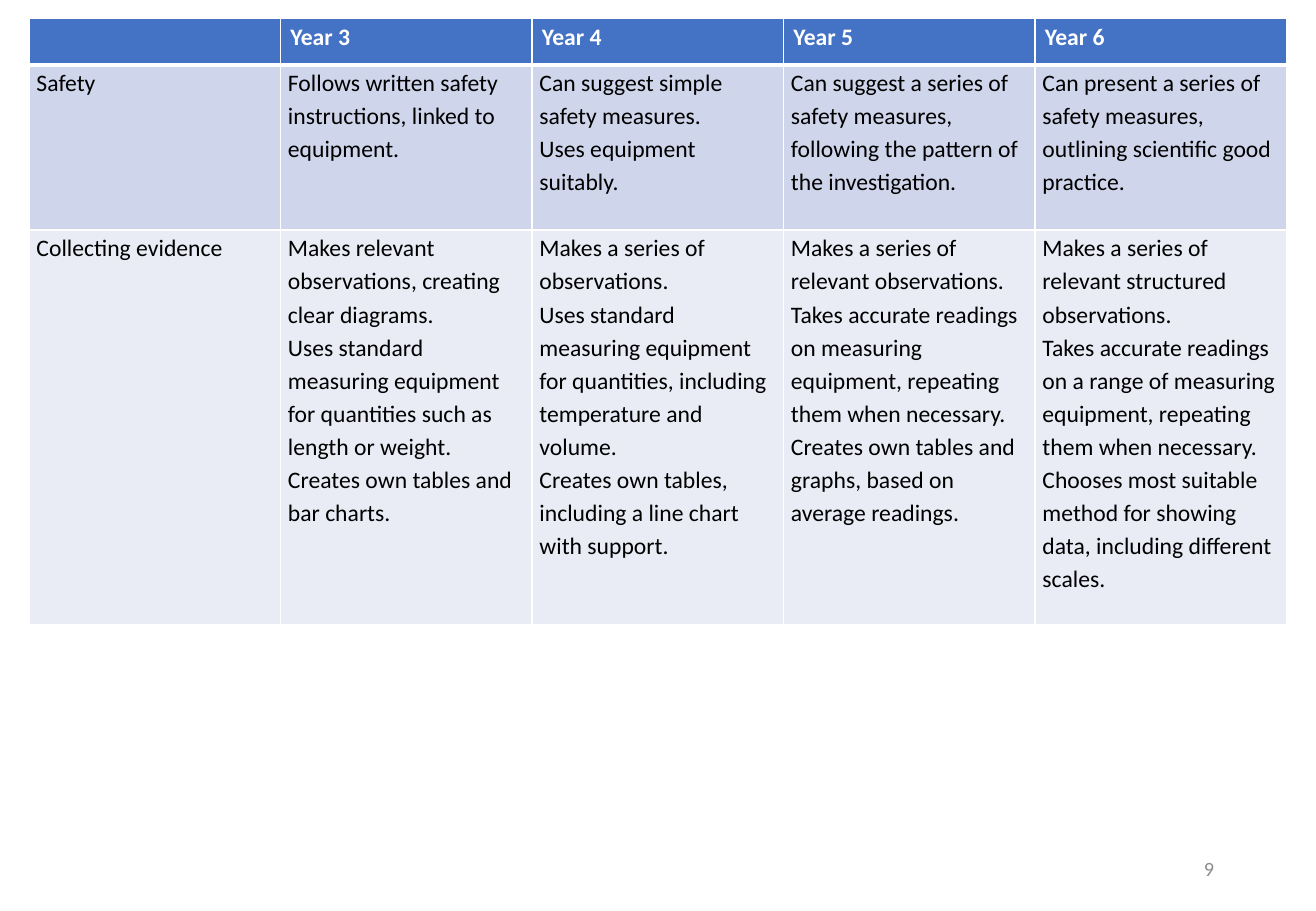
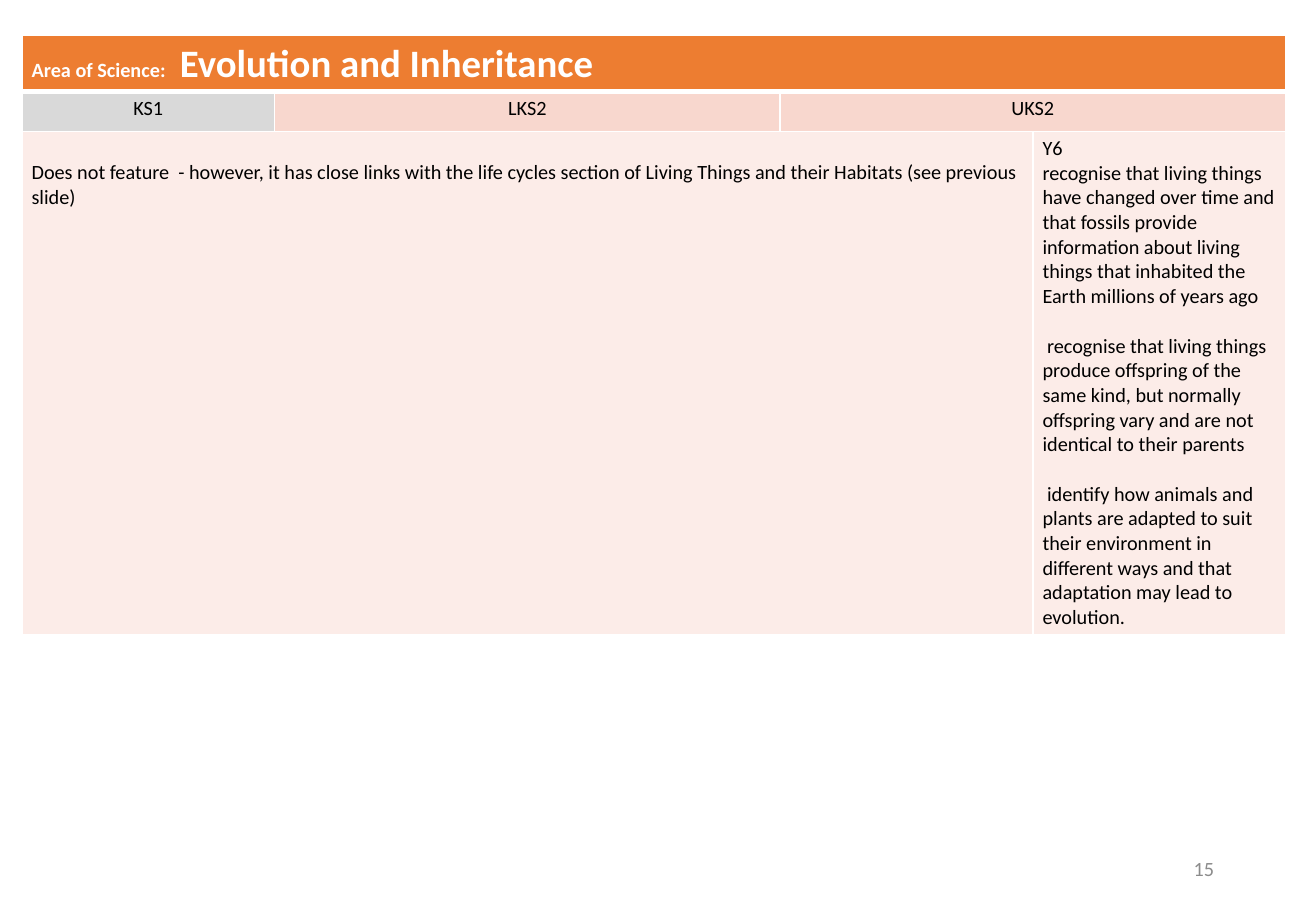
from dataclasses import dataclass

from lxml import etree
from pptx import Presentation
from pptx.dml.color import RGBColor
from pptx.enum import text as t
from pptx.oxml import ns
from pptx.util import Inches, Pt


@dataclass(frozen=True)
class Theme:
    font: str = "Calibri"
    white: str = "FFFFFF"
    black: str = "000000"
    grey: str = "8C8C8C"
    blue: str = "4472C4"
    blue_mid: str = "CFD5EA"
    blue_pale: str = "E9EBF5"
    orange: str = "ED7D31"
    orange_mid: str = "F8D7CE"
    orange_pale: str = "FCECE8"
    muted: str = "D9D9D9"
    heading: float = 23
    body: float = 14
    small: float = 12
    rule: float = 1
    header_rule: float = 3


THEME = Theme()
LEFT, CENTER, RIGHT = t.PP_ALIGN.LEFT, t.PP_ALIGN.CENTER, t.PP_ALIGN.RIGHT
WIDE_INSETS = (0.08, 0.04, 0.08, 0.04)
TIGHT_INSETS = (0.06, 0, 0.06, 0)

YEARS = ["", "Year 3", "Year 4", "Year 5", "Year 6"]
SAFETY = [
    "Safety",
    "Follows written safety instructions, linked to equipment.",
    ["Can suggest simple safety measures.", "Uses equipment suitably."],
    "Can suggest a series of safety measures, following the pattern of the investigation.",
    "Can present a series of safety measures, outlining scientific good practice.",
]
EVIDENCE = [
    "Collecting evidence",
    ["Makes relevant observations, creating clear diagrams.",
     "Uses standard measuring equipment for quantities such as length or weight.",
     "Creates own tables and bar charts."],
    ["Makes a series of observations.",
     "Uses standard measuring equipment for quantities, including temperature and volume.",
     "Creates own tables, including a line chart with support."],
    ["Makes a series of relevant observations.",
     "Takes accurate readings on measuring equipment, repeating them when necessary.",
     "Creates own tables and graphs, based on average readings."],
    ["Makes a series of relevant structured observations.",
     "Takes accurate readings on a range of measuring equipment, repeating them when necessary.",
     "Chooses most suitable method for showing data, including different scales."],
]

AREA_LABEL, AREA = "Area of Science:", "Evolution and Inheritance"
STAGES = ["KS1", "LKS2", "UKS2"]
NOT_FEATURED = ("Does not feature  - however, it has close links with the life cycles "
                "section of Living Things and their Habitats (see previous slide)")
YEAR_6 = [
    "Y6",
    "recognise that living things have changed over time and that fossils provide "
    "information about living things that inhabited the Earth millions of years ago",
    " recognise that living things produce offspring of the same kind, but normally "
    "offspring vary and are not identical to their parents",
    " identify how animals and plants are adapted to suit their environment in "
    "different ways and that adaptation may lead to evolution.",
]


def write(frame, content, size=THEME.body, color=THEME.black, bold=False,
          align=LEFT, spacing=None, gap=0, gap_from=0):
    """Write one paragraph per string; paragraphs from gap_from on get a gap above."""
    frame.word_wrap = True
    lines = [content] if isinstance(content, str) else content
    for i, line in enumerate(lines):
        paragraph = frame.add_paragraph() if i else frame.paragraphs[0]
        paragraph.alignment = align
        if spacing:
            paragraph.line_spacing = spacing
        if gap and i >= gap_from:
            paragraph.space_before = Pt(gap)
        add_run(paragraph, line, size, color, bold)


def add_run(paragraph, words, size, color, bold):
    run = paragraph.add_run()
    run.text = words
    font = run.font
    font.name, font.size, font.bold = THEME.font, Pt(size), bold
    font.color.rgb = RGBColor.from_string(color)


def set_borders(cell, top, bottom):
    props = cell._tc.get_or_add_tcPr()
    widths = {"lnL": THEME.rule, "lnR": THEME.rule, "lnT": top, "lnB": bottom}
    for i, (side, width) in enumerate(widths.items()):
        line = etree.Element(ns.qn(f"a:{side}"), w=str(Pt(width)))
        fill = etree.SubElement(line, ns.qn("a:solidFill"))
        etree.SubElement(fill, ns.qn("a:srgbClr"), val=THEME.white)
        props.insert(i, line)


def add_grid(slide, left, top, columns, rows):
    """Add a plain table with white rules and a thick rule under its first row."""
    grid = slide.shapes.add_table(len(rows), len(columns), Inches(left), Inches(top),
                                  Inches(sum(columns)), Inches(sum(rows))).table
    grid.first_row = grid.horz_banding = False
    for column, width in zip(grid.columns, columns):
        column.width = Inches(width)
    for r, height in enumerate(rows):
        grid.rows[r].height = Inches(height)
        for cell in grid.rows[r].cells:
            set_borders(cell, THEME.header_rule if r == 1 else THEME.rule,
                        THEME.header_rule if r == 0 else THEME.rule)
    return grid


def fill_cell(cell, content, fill, insets=WIDE_INSETS, **text_format):
    cell.fill.solid()
    cell.fill.fore_color.rgb = RGBColor.from_string(fill)
    (cell.margin_left, cell.margin_top,
     cell.margin_right, cell.margin_bottom) = map(Inches, insets)
    if content:
        write(cell.text_frame, content, **text_format)


def add_page_number(slide, number):
    frame = slide.shapes.add_textbox(Inches(7.65), Inches(6.95),
                                     Inches(2.44), Inches(0.4)).text_frame
    frame.vertical_anchor = t.MSO_ANCHOR.MIDDLE
    write(frame, str(number), size=THEME.small, color=THEME.grey, align=RIGHT)


def build_skills(slide):
    grid = add_grid(slide, 0.24, 0.15, [2.07] * len(YEARS), [0.33, 1.36, 3.25])
    header = dict(fill=THEME.blue, color=THEME.white, bold=True)
    body = dict(insets=TIGHT_INSETS, spacing=1.15)
    bands = [(YEARS, header),
             (SAFETY, dict(body, fill=THEME.blue_mid)),
             (EVIDENCE, dict(body, fill=THEME.blue_pale))]
    for r, (contents, look) in enumerate(bands):
        for c, content in enumerate(contents):
            fill_cell(grid.cell(r, c), content, **look)


def build_evolution(slide):
    grid = add_grid(slide, 0.18, 0.29, [2.08, 4.16, 2.08, 2.08], [0.46, 0.33, 4.14])
    for row, first, last in [(0, 0, 3), (1, 2, 3), (2, 0, 2)]:
        grid.cell(row, first).merge(grid.cell(row, last))

    area = grid.cell(0, 0)
    fill_cell(area, AREA_LABEL + "\t", THEME.orange,
              size=THEME.small, color=THEME.white, bold=True)
    area_line = area.text_frame.paragraphs[0]
    add_run(area_line, AREA, THEME.heading, THEME.white, True)
    tabs = etree.SubElement(area_line._p.get_or_add_pPr(), ns.qn("a:tabLst"))
    etree.SubElement(tabs, ns.qn("a:tab"), pos=str(Inches(1.22)), algn="l")

    stage_fills = [THEME.muted, THEME.orange_mid, THEME.orange_mid]
    for c, (stage, fill) in enumerate(zip(STAGES, stage_fills)):
        fill_cell(grid.cell(1, c), stage, fill, size=THEME.small, align=CENTER)

    fill_cell(grid.cell(2, 0), NOT_FEATURED, THEME.orange_pale,
              insets=(0.08, 0.24, 0.08, 0.04), size=THEME.small)
    fill_cell(grid.cell(2, 3), YEAR_6, THEME.orange_pale, size=THEME.small,
              gap=14.65, gap_from=2)


def main():
    deck = Presentation()
    deck.slide_width, deck.slide_height = Inches(10.83), Inches(7.5)
    blank = deck.slide_layouts[6]
    for build, number in [(build_skills, 9), (build_evolution, 15)]:
        slide = deck.slides.add_slide(blank)
        build(slide)
        add_page_number(slide, number)
    deck.save("out.pptx")


if __name__ == "__main__":
    main()
